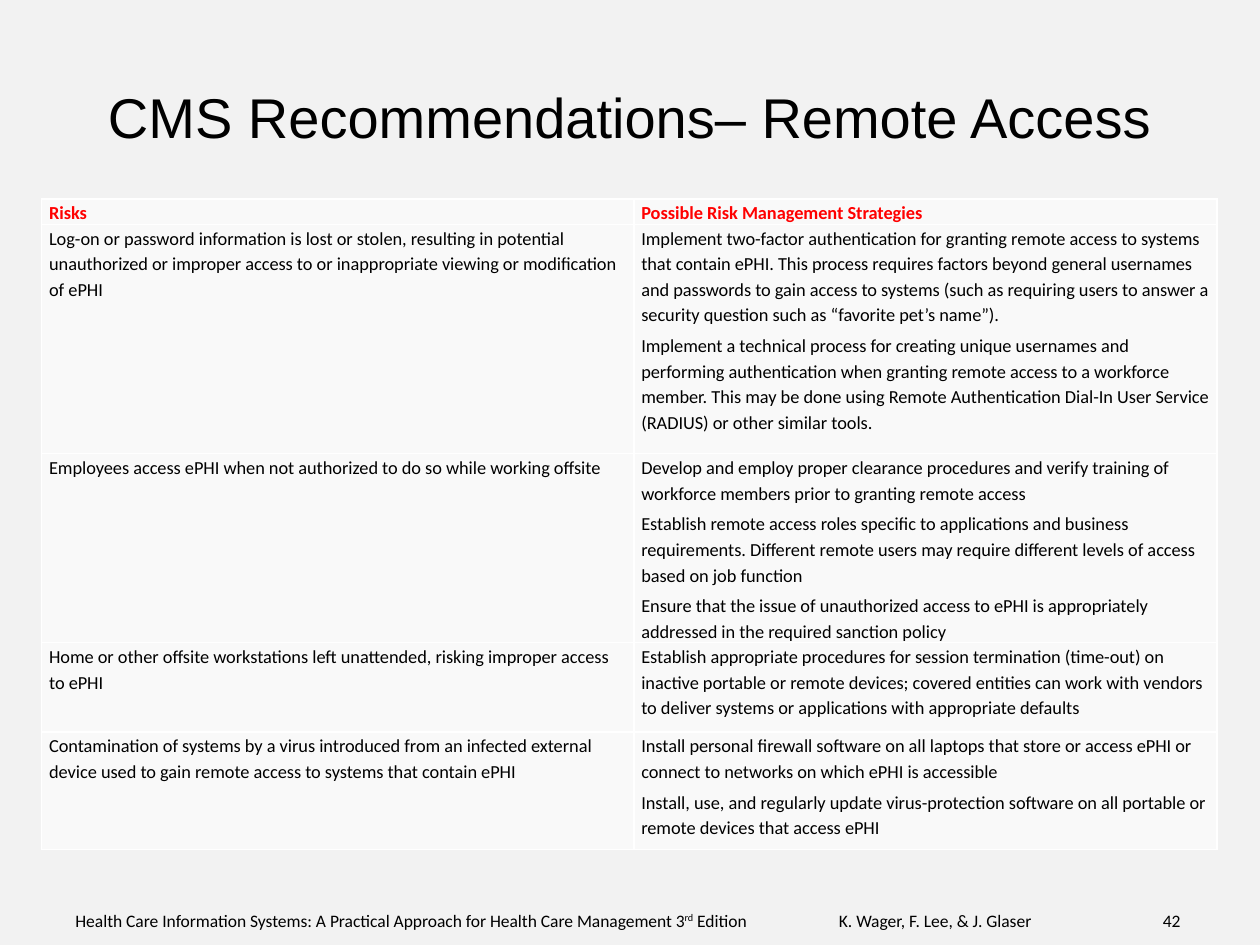
from lxml.etree import SubElement
from pptx import Presentation
from pptx.dml.color import RGBColor
from pptx.enum.text import MSO_ANCHOR as Anchor, PP_ALIGN as Align
from pptx.oxml.ns import qn
from pptx.util import Inches, Pt

BLACK = RGBColor(0x00, 0x00, 0x00)
RED = RGBColor(0xFF, 0x00, 0x00)
WHITE = RGBColor(0xFF, 0xFF, 0xFF)
PAGE_GREY = RGBColor(0xF2, 0xF2, 0xF2)
CELL_GREY = RGBColor(0xF9, 0xF9, 0xF9)

TITLE = {"name": "Arial", "size": Pt(32), "color": BLACK}
FOOTER = {"name": "Calibri", "size": Pt(10), "color": BLACK}
BODY = {"name": "Calibri", "size": Pt(10.5), "color": BLACK, "bold": False}
HEADING = {**BODY, "color": RED, "bold": True}

HEADINGS = ["Risks", "Possible Risk Management Strategies"]
# Each risk with its list of strategies
RISKS = [
    ("Log-on or password information is lost or stolen, resulting in potential "
     "unauthorized or improper access to or inappropriate viewing or modification of ePHI",
     ["Implement two-factor authentication for granting remote access to systems that "
      "contain ePHI. This process requires factors beyond general usernames and passwords "
      "to gain access to systems (such as requiring users to answer a security question "
      "such as “favorite pet’s name”).",
      "Implement a technical process for creating unique usernames and performing "
      "authentication when granting remote access to a workforce member. This may be done "
      "using Remote Authentication Dial-In User Service (RADIUS) or other similar tools."]),
    ("Employees access ePHI when not authorized to do so while working offsite",
     ["Develop and employ proper clearance procedures and verify training of workforce "
      "members prior to granting remote access",
      "Establish remote access roles specific to applications and business requirements. "
      "Different remote users may require different levels of access based on job function",
      "Ensure that the issue of unauthorized access to ePHI is appropriately addressed in "
      "the required sanction policy"]),
    ("Home or other offsite workstations left unattended, risking improper access to ePHI",
     ["Establish appropriate procedures for session termination (time-out) on inactive "
      "portable or remote devices; covered entities can work with vendors to deliver "
      "systems or applications with appropriate defaults"]),
    ("Contamination of systems by a virus introduced from an infected external device used "
     "to gain remote access to systems that contain ePHI",
     ["Install personal firewall software on all laptops that store or access ePHI or "
      "connect to networks on which ePHI is accessible",
      "Install, use, and regularly update virus-protection software on all portable or "
      "remote devices that access ePHI"]),
]


class SlideBuilder:
    """Places elements on a grid of 100 columns by 75 rows."""

    def __init__(self, deck):
        self.unit_x = deck.slide_width / 100
        self.unit_y = deck.slide_height / 75
        self.page = deck.slides.add_slide(deck.slide_layouts[6])
        self.page.background.fill.solid()
        self.page.background.fill.fore_color.rgb = PAGE_GREY

    def x(self, columns):
        return int(columns * self.unit_x)

    def y(self, rows):
        return int(rows * self.unit_y)

    def span(self, para, text, style):
        run = para.add_run()
        run.text = text
        for key, value in style.items():
            if key == "color":
                run.font.color.rgb = value
            else:
                setattr(run.font, key, value)
        return run

    def text(self, left, top, width, height, spans, style, anchor=Anchor.TOP,
             align=Align.LEFT, tabs=()):
        box = self.page.shapes.add_textbox(
            self.x(left), self.y(top), self.x(width), self.y(height))
        frame = box.text_frame
        frame.word_wrap = True
        frame.vertical_anchor = anchor
        para = frame.paragraphs[0]
        para.alignment = align
        if tabs:
            tab_list = SubElement(para._p.get_or_add_pPr(), qn("a:tabLst"))
            for column, side in tabs:
                SubElement(tab_list, qn("a:tab"), pos=str(self.x(column)), algn=side)
        for text, baseline in spans:
            run = self.span(para, text, style)
            if baseline:
                run._r.get_or_add_rPr().set("baseline", str(baseline))

    def cell(self, cell, texts, style, anchor=Anchor.TOP, space_after=None):
        margins = {"margin_left": Inches(0.06), "margin_right": Inches(0.06),
                   "margin_top": 0, "margin_bottom": 0, "vertical_anchor": anchor}
        for key, value in margins.items():
            setattr(cell, key, value)
        frame = cell.text_frame
        for index, text in enumerate(texts):
            para = frame.add_paragraph() if index else frame.paragraphs[0]
            para.line_spacing = 1.15
            para.space_after = space_after
            self.span(para, text, style)
        # Borders come before the fill in the cell properties
        properties = cell._tc.get_or_add_tcPr()
        for side in ("lnL", "lnR", "lnT", "lnB"):
            line = SubElement(properties, qn(f"a:{side}"), w=str(Pt(1)))
            fill = SubElement(line, qn("a:solidFill"))
            SubElement(fill, qn("a:srgbClr"), val=str(WHITE))
        cell.fill.solid()
        cell.fill.fore_color.rgb = CELL_GREY

    def table(self, left, top, widths, heights, headings, risks):
        table = self.page.shapes.add_table(
            len(heights), len(widths), self.x(left), self.y(top),
            self.x(sum(widths)), self.y(sum(heights))).table
        for column, width in zip(table.columns, widths):
            column.width = self.x(width)
        for row, height in zip(table.rows, heights):
            row.height = self.y(height)
        for index, heading in enumerate(headings):
            self.cell(table.cell(0, index), [heading], HEADING, Anchor.MIDDLE)
        for index, (risk, strategies) in enumerate(risks, start=1):
            for column, texts in enumerate(([risk], strategies)):
                self.cell(table.cell(index, column), texts, BODY, space_after=Pt(3))


def main():
    deck = Presentation()
    deck.slide_width, deck.slide_height = Inches(10), Inches(7.5)
    builder = SlideBuilder(deck)

    # Footer: book, authors and page number on tab stops
    builder.text(
        5, 71.7, 90.8, 3.1,
        [("Health Care Information Systems: A Practical Approach for Health Care Management 3", 0),
         ("rd", 30000),
         (" Edition\tK. Wager, F. Lee, & J. Glaser\t42", 0)],
        FOOTER, tabs=[(60.6, "l"), (87.7, "r")])

    # Title
    builder.text(5, 3, 90, 12.5, [("CMS Recommendations– Remote Access", 0)],
                 TITLE, Anchor.MIDDLE, Align.CENTER)

    # Risks and strategies
    builder.table(3.3, 15.8, [47, 46.3], [2, 18.2, 15, 7.1, 9.3], HEADINGS, RISKS)

    deck.save("out.pptx")


if __name__ == "__main__":
    main()
